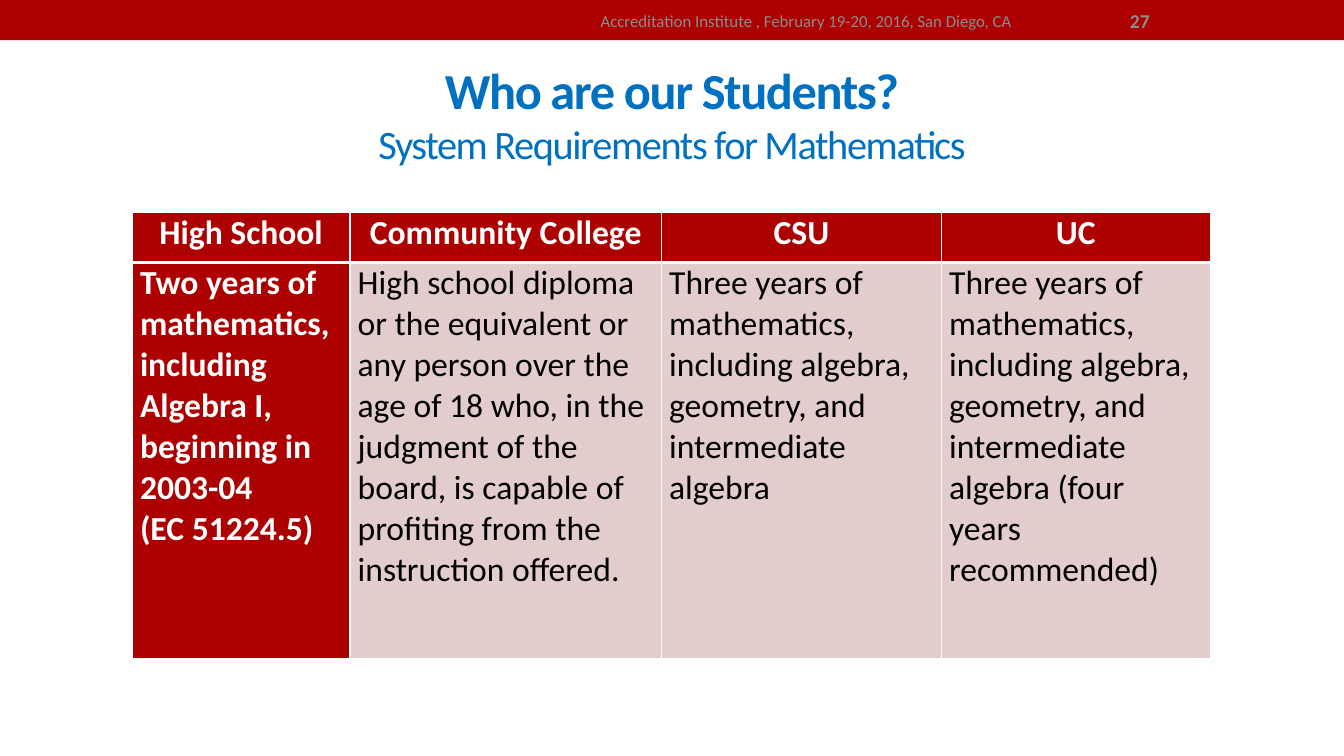
from lxml.etree import SubElement
from pptx import Presentation
from pptx.dml.color import RGBColor
from pptx.enum.shapes import MSO_SHAPE
from pptx.enum.text import MSO_ANCHOR, MSO_AUTO_SIZE, PP_ALIGN
from pptx.oxml.ns import qn
from pptx.util import Pt

RED, PINK, BLUE, GRAY = "AD0101", "E3CCCC", "0070C0", "8C8C8C"
WHITE, BLACK = "FFFFFF", "000000"

TITLE = [("Who are our Students?", 36, True),
         ("System Requirements for Mathematics", 28.8, False)]
FOOTER = "Accreditation Institute , February 19-20, 2016, San Diego, CA"
PAGE_NUMBER = "27"
REQUIREMENTS = [
    ("High School", 155.5,
     "Two years of mathematics, including Algebra I, beginning in 2003-04\v(EC 51224.5)"),
    ("Community College", 222.5,
     "High school diploma or the equivalent or any person over the age of 18 who, "
     "in the judgment of the board, is capable of profiting from the instruction offered."),
    ("CSU", 200,
     "Three years of mathematics, including algebra, geometry, and intermediate algebra"),
    ("UC", 192,
     "Three years of mathematics, including algebra, geometry, and intermediate algebra "
     "(four years recommended)"),
]
ROW_HEIGHTS = (35.5, 283)


def color(code):
    return RGBColor.from_string(code)


def style(font, size, code, bold=False):
    font.name, font.size, font.bold = "Calibri", Pt(size), bold
    font.color.rgb = color(code)


def add_label(page, text, left, width, size, bold, align):
    box = page.shapes.add_textbox(Pt(left), Pt(1.5), Pt(width), Pt(26))
    frame = box.text_frame
    frame.word_wrap = True
    frame.vertical_anchor = MSO_ANCHOR.MIDDLE
    para = frame.paragraphs[0]
    para.text, para.alignment = text, align
    style(para.font, size, GRAY, bold)


def set_borders(cell, top, bottom):
    """Draw white borders, 1 pt at the sides; top and bottom are in points."""
    properties = cell._tc.get_or_add_tcPr()
    for side, width in (("L", 1), ("R", 1), ("T", top), ("B", bottom)):
        line = SubElement(properties, qn("a:ln" + side), w=str(Pt(width)))
        fill = SubElement(line, qn("a:solidFill"))
        SubElement(fill, qn("a:srgbClr"), val=WHITE)


def fill_cell(cell, text, is_header, is_first):
    dark = is_header or is_first
    set_borders(cell, 1 if is_header else 3, 3 if is_header else 1)
    cell.fill.solid()
    cell.fill.fore_color.rgb = color(RED if dark else PINK)
    cell.margin_left = cell.margin_right = Pt(5.5)
    cell.margin_top = cell.margin_bottom = 0
    para = cell.text_frame.paragraphs[0]
    para.text = text
    para.alignment = PP_ALIGN.CENTER if is_header else PP_ALIGN.LEFT
    style(para.font, 24, WHITE if dark else BLACK, dark)


def add_title(page):
    title = page.shapes.title
    title.left, title.top, title.width, title.height = Pt(48), Pt(42), Pt(864), Pt(78)
    frame = title.text_frame
    frame.auto_size = MSO_AUTO_SIZE.NONE
    frame.vertical_anchor = MSO_ANCHOR.MIDDLE
    para = frame.paragraphs[0]
    para.alignment = PP_ALIGN.CENTER
    for index, (text, size, bold) in enumerate(TITLE):
        if index:
            para.add_line_break()
        span = para.add_run()
        span.text = text
        style(span.font, size, BLUE, bold)
        span.font._element.set("spc", "-100")


def add_requirements(page):
    table = page.shapes.add_table(
        2, len(REQUIREMENTS), Pt(94.5), Pt(152),
        Pt(sum(width for _, width, _ in REQUIREMENTS)), Pt(sum(ROW_HEIGHTS))).table
    table.first_row = table.horz_banding = False
    for row, height in zip(table.rows, ROW_HEIGHTS):
        row.height = Pt(height)
    for index, (system, width, requirement) in enumerate(REQUIREMENTS):
        table.columns[index].width = Pt(width)
        fill_cell(table.cell(0, index), system, True, index == 0)
        fill_cell(table.cell(1, index), requirement, False, index == 0)


def main():
    deck = Presentation()
    deck.slide_width, deck.slide_height = Pt(960), Pt(540)
    page = deck.slides.add_slide(deck.slide_layouts[5])
    band = page.shapes.add_shape(MSO_SHAPE.RECTANGLE, 0, 0, Pt(960), Pt(28.8))
    band.shadow.inherit = False
    band.fill.solid()
    band.fill.fore_color.rgb = color(RED)
    band.line.fill.background()
    add_title(page)
    add_requirements(page)
    add_label(page, FOOTER, 360, 432, 12, False, PP_ALIGN.CENTER)
    add_label(page, PAGE_NUMBER, 800, 112, 14, True, PP_ALIGN.LEFT)
    deck.save("out.pptx")


if __name__ == "__main__":
    main()
